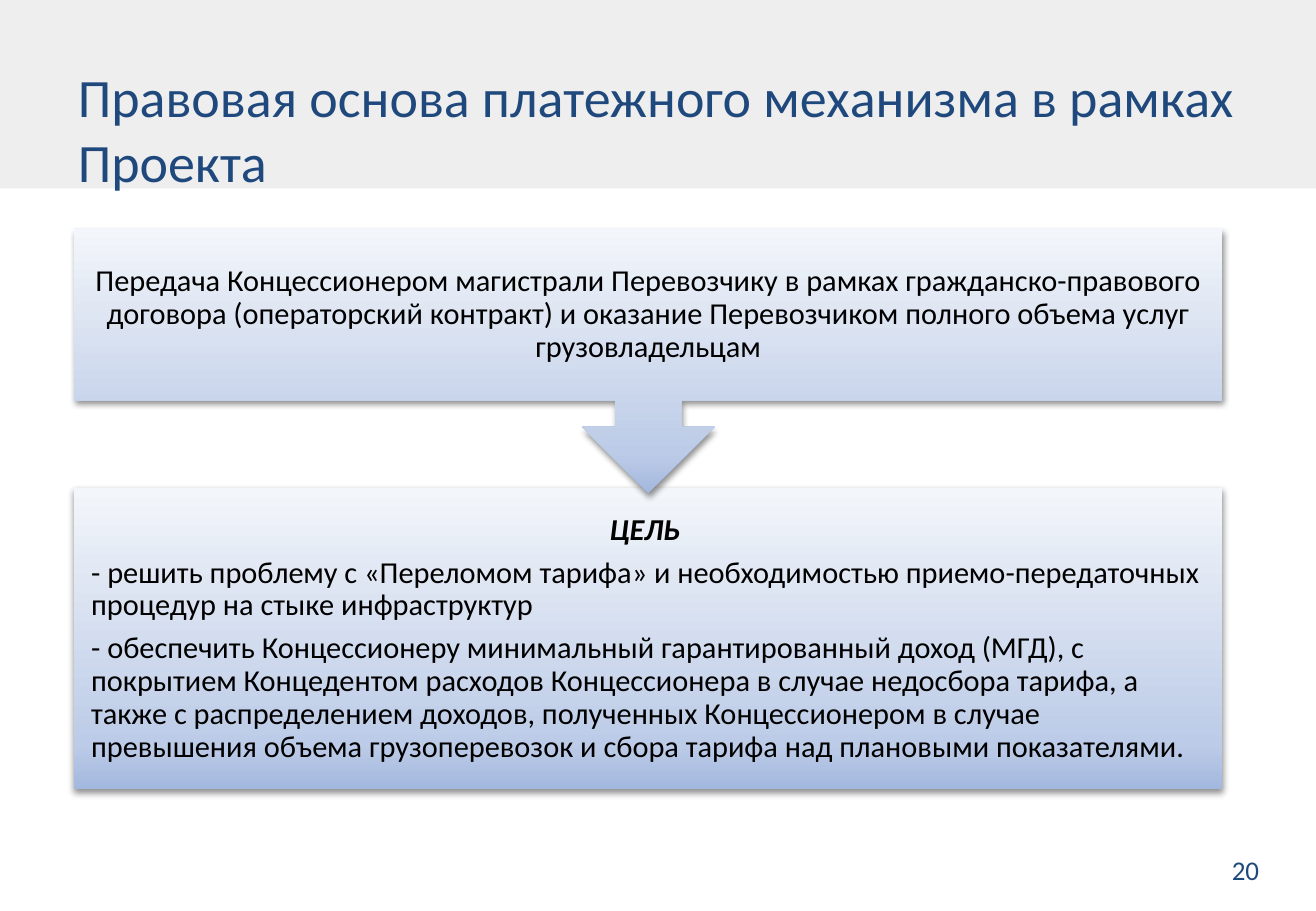
from copy import deepcopy
from dataclasses import dataclass

from lxml.etree import SubElement
from pptx import Presentation
from pptx.dml.color import RGBColor
from pptx.enum.shapes import MSO_SHAPE as Shape
from pptx.enum.text import MSO_ANCHOR as Anchor, MSO_AUTO_SIZE as AutoSize, PP_ALIGN as Align
from pptx.oxml.ns import qn
from pptx.util import Inches, Pt

FONT = "Calibri"
NAVY, BLACK, WHITE, GREY = "1F497D", "000000", "FFFFFF", "EEEEEE"
GRADIENT = [(0, "A3B8DF"), (0.15, "BCCBE7"), (1, "F3F6FA")]
SLIDE_WIDTH, SLIDE_HEIGHT = 10.83, 7.5
BAND_HEIGHT = 1.55
PANEL_LEFT, PANEL_WIDTH, PANEL_INSET = 0.61, 9.45, 0.14


@dataclass
class Line:
    text: str
    align: Align = Align.LEFT
    emphasis: bool = False


@dataclass
class Panel:
    kind: Shape
    top: float
    height: float
    lines: list[Line]


PANELS = [
    Panel(Shape.RECTANGLE, 4.02, 2.48, [
        Line("ЦЕЛЬ ", Align.CENTER, True),
        Line("- решить проблему с «Переломом тарифа» и необходимостью "
             "приемо-передаточных процедур на стыке инфраструктур"),
        Line("- обеспечить Концессионеру минимальный гарантированный доход (МГД), "
             "с покрытием Концедентом расходов Концессионера в случае недосбора тарифа, "
             "а также с распределением доходов, полученных Концессионером в случае "
             "превышения объема грузоперевозок и сбора тарифа над плановыми показателями."),
    ]),
    Panel(Shape.DOWN_ARROW_CALLOUT, 1.88, 2.18, [
        Line("Передача Концессионером магистрали Перевозчику в рамках гражданско-правового "
             "договора (операторский контракт) и оказание Перевозчиком полного объема услуг "
             "грузовладельцам", Align.CENTER),
    ]),
]


def color(value: str) -> RGBColor:
    return RGBColor.from_string(value)


def add_run(paragraph, text: str, size: float, hex_color: str, emphasis: bool = False) -> None:
    run = paragraph.add_run()
    run.text = text
    run.font.name = FONT
    run.font.size = Pt(size)
    run.font.color.rgb = color(hex_color)
    run.font.bold = run.font.italic = emphasis


def fill_gradient(shape) -> None:
    shape.fill.gradient()
    shape.fill.gradient_angle = 90
    stop_list = shape.element.spPr.find(".//" + qn("a:gsLst"))
    stop_list.insert(1, deepcopy(stop_list[0]))
    for stop, (position, value) in zip(shape.fill.gradient_stops, GRADIENT):
        stop.position = position
        stop.color.rgb = color(value)


def add_shadow(shape) -> None:
    shape.shadow.inherit = False
    effects = shape.element.spPr.find(qn("a:effectLst"))
    shadow = SubElement(effects, qn("a:outerShdw"), blurRad=str(Pt(4)), dist=str(Pt(2)),
                        dir="5400000", rotWithShape="0")
    shade = SubElement(shadow, qn("a:srgbClr"), val=BLACK)
    SubElement(shade, qn("a:alpha"), val="43000")


def add_panel(slide, panel: Panel) -> None:
    shape = slide.shapes.add_shape(panel.kind, Inches(PANEL_LEFT), Inches(panel.top),
                                   Inches(PANEL_WIDTH), Inches(panel.height))
    fill_gradient(shape)
    shape.line.fill.background()
    add_shadow(shape)
    frame = shape.text_frame
    frame.word_wrap = True
    frame.vertical_anchor = Anchor.MIDDLE
    frame.margin_left = frame.margin_right = Inches(PANEL_INSET)
    frame.margin_top = frame.margin_bottom = Inches(PANEL_INSET)
    for index, line in enumerate(panel.lines):
        paragraph = frame.add_paragraph() if index else frame.paragraphs[0]
        paragraph.alignment = line.align
        paragraph.line_spacing = 0.9
        paragraph.space_after = Pt(6)
        add_run(paragraph, line.text, 18, BLACK, line.emphasis)


def add_body_background(slide) -> None:
    body = slide.shapes.add_shape(Shape.RECTANGLE, 0, Inches(BAND_HEIGHT), Inches(SLIDE_WIDTH),
                                  Inches(SLIDE_HEIGHT - BAND_HEIGHT))
    body.shadow.inherit = False
    body.fill.solid()
    body.fill.fore_color.rgb = color(WHITE)
    body.line.fill.background()
    slide.shapes.title.element.addprevious(body.element)


def format_title(slide) -> None:
    title = slide.shapes.title
    title.left, title.top = Inches(0.54), Inches(0.39)
    title.width, title.height = Inches(9.75), Inches(1.25)
    frame = title.text_frame
    frame.word_wrap = True
    frame.auto_size = AutoSize.NONE
    frame.vertical_anchor = Anchor.BOTTOM
    paragraph = frame.paragraphs[0]
    paragraph.alignment = Align.LEFT
    add_run(paragraph, "Правовая основа платежного механизма в рамках Проекта", 32, NAVY)


def add_page_number(slide) -> None:
    box = slide.shapes.add_textbox(Inches(7.93), Inches(6.98), Inches(2.53), Inches(0.52))
    box.text_frame.word_wrap = True
    paragraph = box.text_frame.paragraphs[0]
    paragraph.alignment = Align.RIGHT
    add_run(paragraph, "20", 16, NAVY)


def main() -> None:
    """Build the slide on the legal basis of the payment mechanism."""
    presentation = Presentation()
    presentation.slide_width = Inches(SLIDE_WIDTH)
    presentation.slide_height = Inches(SLIDE_HEIGHT)
    slide = presentation.slides.add_slide(presentation.slide_layouts[5])
    slide.background.fill.solid()
    slide.background.fill.fore_color.rgb = color(GREY)
    add_body_background(slide)
    format_title(slide)
    for panel in PANELS:
        add_panel(slide, panel)
    add_page_number(slide)
    presentation.save("out.pptx")


if __name__ == "__main__":
    main()
